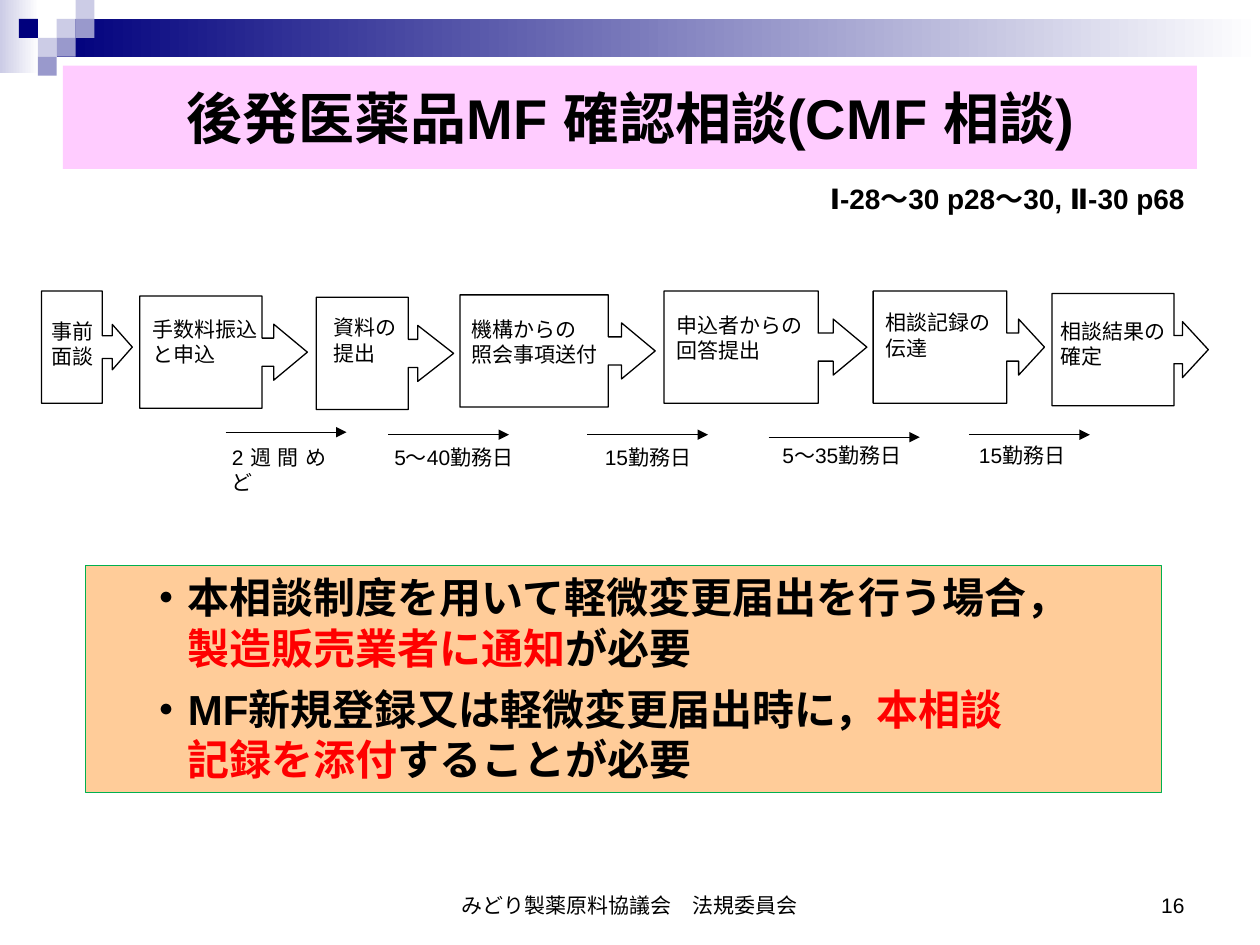
import pptx
import pptx.util
import pptx.dml.color
import pptx.enum.shapes
import pptx.enum.text
import pptx.oxml.ns
import lxml.etree

COLUMNS, ROWS = 100, 75
COLORS = {"black": "000000", "red": "FF0000", "navy": "00007D", "lilac": "CCCCE6",
          "violet": "9999CC", "white": "FFFFFF", "pink": "FFCCFF",
          "peach": "FFCC99", "green": "00B050"}
ALIGN = pptx.enum.text.PP_ALIGN
ANCHOR = pptx.enum.text.MSO_ANCHOR
SHAPES = pptx.enum.shapes.MSO_SHAPE
INSETS = (0.1, 0.05)
TIGHT_INSETS = (0.06, 0.03)

presentation = pptx.Presentation()
presentation.slide_width = pptx.util.Inches(10)
presentation.slide_height = pptx.util.Inches(7.5)
slide = presentation.slides.add_slide(presentation.slide_layouts[6])


def rgb(name):
    return pptx.dml.color.RGBColor.from_string(COLORS[name])


def grid(*cells):
    """Turn alternating columns and rows into slide lengths."""
    units = (presentation.slide_width / COLUMNS, presentation.slide_height / ROWS)
    return [round(cell * units[index % 2]) for index, cell in enumerate(cells)]


def inside(box, left, top, width, height):
    return box[0] + left, box[1] + top, width, height


def add_box(box, fill=None, line=None, preset=SHAPES.RECTANGLE):
    shape = slide.shapes.add_shape(preset, *grid(*box))
    shape.shadow.inherit = False
    if fill:
        shape.fill.solid()
        shape.fill.fore_color.rgb = rgb(fill)
    else:
        shape.fill.background()
    if line:
        shape.line.color.rgb = rgb(line)
        shape.line.width = pptx.util.Pt(0.75)
    else:
        shape.line.fill.background()
    return shape


def add_fade(box, start):
    shape = add_box(box)
    shape.fill.gradient()
    shape.fill.gradient_angle = 0
    for stop, color in zip(shape.fill.gradient_stops, (start, "white")):
        stop.color.rgb = rgb(color)


def write(shape, paragraphs, size, bold=False, align=ALIGN.LEFT,
          anchor=ANCHOR.TOP, insets=INSETS):
    """Fill a shape; each paragraph is a list of (text, color) runs."""
    frame = shape.text_frame
    frame.word_wrap = True
    frame.vertical_anchor = anchor
    frame.margin_left = frame.margin_right = pptx.util.Inches(insets[0])
    frame.margin_top = frame.margin_bottom = pptx.util.Inches(insets[1])
    for index, runs in enumerate(paragraphs):
        paragraph = frame.add_paragraph() if index else frame.paragraphs[0]
        paragraph.alignment = align
        for text, color in runs:
            run = paragraph.add_run()
            run.text = text
            run.font.name = "Arial"
            run.font.size = pptx.util.Pt(size)
            run.font.bold = bold
            run.font.color.rgb = rgb(color)
    return frame.paragraphs


def add_text(box, lines, size, **style):
    shape = slide.shapes.add_textbox(*grid(*box))
    return write(shape, [[(line, "black")] for line in lines], size, **style)


def add_arrow(box, left, top, width):
    x, y = box[0] + left, box[1] + top
    connector = slide.shapes.add_connector(
        pptx.enum.shapes.MSO_CONNECTOR.STRAIGHT, *grid(x, y, x + width, y))
    connector.line.color.rgb = rgb("black")
    connector.line.width = pptx.util.Pt(0.75)
    line = connector.line._get_or_add_ln()
    tail = lxml.etree.SubElement(line, pptx.oxml.ns.qn("a:tailEnd"))
    tail.set("type", "triangle")
    lxml.etree.SubElement(connector._element.spPr, pptx.oxml.ns.qn("a:effectLst"))


def add_banner(box):
    tile = 1.5
    add_fade(inside(box, 0, 0, 3.1, 5.8), "lilac")
    add_fade(inside(box, 3 * tile, tile, box[2] - 3 * tile, 2 * tile), "navy")
    # Mosaic tiles as (column, row, color)
    for column, row, color in [(3, 1, "lilac"), (4, 0, "lilac"), (4, 1, "violet"),
                               (2, 2, "lilac"), (1, 1, "navy"), (3, 2, "violet"),
                               (2, 3, "violet")]:
        add_box(inside(box, column * tile, row * tile, tile, tile), color)


def add_heading(box):
    write(add_box(inside(box, 0, 0, box[2], 8.2), "pink"),
          [[("後発医薬品MF 確認相談(CMF 相談)", "black")]],
          32, bold=True, align=ALIGN.CENTER, anchor=ANCHOR.MIDDLE)
    # Page references, right-aligned with the title band
    reference = add_text(inside(box, box[2] - 32.7, 9.2, 32.7, 3.2),
                         ["Ⅰ-28〜30 p28〜30, Ⅱ-30 p68"],
                         16, bold=True, align=ALIGN.RIGHT)[0]
    reference.line_spacing = 0.8
    reference.space_before = pptx.util.Pt(3)


def add_process(box):
    # Steps: left, top, width, head length, body share, label offset, lines
    steps = [
        (0, 0, 7.2, 0.22, 0.67, (0.2, 1.9), ["事前", "面談"]),
        (7.8, 0.4, 13.3, 0.3, 0.73, (0.4, 1.3), ["手数料振込", "と申込"]),
        (21.8, 0.5, 10.9, 0.32, 0.67, (0.8, 1.1), ["資料の", "提出"]),
        (33.2, 0.3, 15.5, 0.3, 0.76, (0.3, 1.4), ["機構からの", "照会事項送付"]),
        (49.4, 0, 16.1, 0.3, 0.76, (0.4, 1.4), ["申込者からの", "回答提出"]),
        (66, 0, 13.6, 0.23, 0.78, (0.4, 1.2), ["相談記録の", "伝達"]),
        (80.2, 0.2, 12.4, 0.23, 0.78, (0.1, 1.7), ["相談結果の", "確定"]),
    ]
    for left, top, width, head, body, offset, lines in steps:
        callout = add_box(inside(box, left, top, width, 8.9), line="black",
                          preset=SHAPES.RIGHT_ARROW_CALLOUT)
        for index, value in enumerate((0.25, 0.25, head, body)):
            callout.adjustments[index] = value
        label_width = max(map(len, lines)) * 1.67 + 1.4
        add_text(inside(box, left + offset[0], top + offset[1], label_width, 4.6),
                 lines, 12, align=ALIGN.JUSTIFY, insets=TIGHT_INSETS)

    # Durations: arrow left, top, width, label left, top, width, text
    durations = [
        (14.6, 11.2, 9.6, 14.5, 11.9, 8.7, "2週間めど"),
        (27.5, 11.4, 9.6, 27.4, 11.9, 10.7, "5～40勤務日"),
        (43.3, 11.4, 9.6, 44.1, 11.9, 8.1, "15勤務日"),
        (57.7, 11.6, 12, 58.2, 11.7, 10.7, "5～35勤務日"),
        (73.6, 11.4, 9.6, 73.8, 11.7, 8.1, "15勤務日"),
    ]
    for left, top, width, label_left, label_top, label_width, text in durations:
        add_arrow(box, left, top, width)
        add_text(inside(box, label_left, label_top, label_width, 2.6), [text],
                 12, align=ALIGN.JUSTIFY, insets=TIGHT_INSETS)


def add_notice(box):
    paragraphs = write(add_box(box, "peach", "green"), [
        [("・本相談制度を用いて軽微変更届出を行う場合，", "black")],
        [("　", "black"), ("製造販売業者に通知", "red"), ("が必要", "black")],
        [("・MF新規登録又は軽微変更届出時に，", "black"), ("本相談", "red")],
        [("　記録を添付", "red"), ("することが必要　", "black")],
    ], 24, bold=True)
    for index, paragraph in enumerate(paragraphs):
        properties = paragraph._p.get_or_add_pPr()
        properties.set("marL", str(pptx.util.Inches(0.38)))
        properties.set("indent", "0")
        paragraph.space_before = pptx.util.Pt(0 if index % 2 else 6)
    paragraphs[-1].space_after = pptx.util.Pt(6)


def add_footer(box):
    middle = 31.7
    add_text(inside(box, (box[2] - middle) / 2, 0, middle, box[3]),
             ["みどり製薬原料協議会　法規委員会"], 12,
             align=ALIGN.CENTER, anchor=ANCHOR.BOTTOM)
    add_text(inside(box, box[2] - 23.3, 0, 23.3, box[3]), ["16"], 12,
             align=ALIGN.RIGHT, anchor=ANCHOR.BOTTOM)


# Regions from top to bottom
add_banner((0, 0, COLUMNS, 6))
add_heading((5, 5.2, 90, 12.4))
add_process((3.3, 23.1, 92.6, 14.5))
add_notice((6.8, 44.9, 85.4, 18))
add_footer((5, 68.3, 90, 5))
presentation.save("out.pptx")
